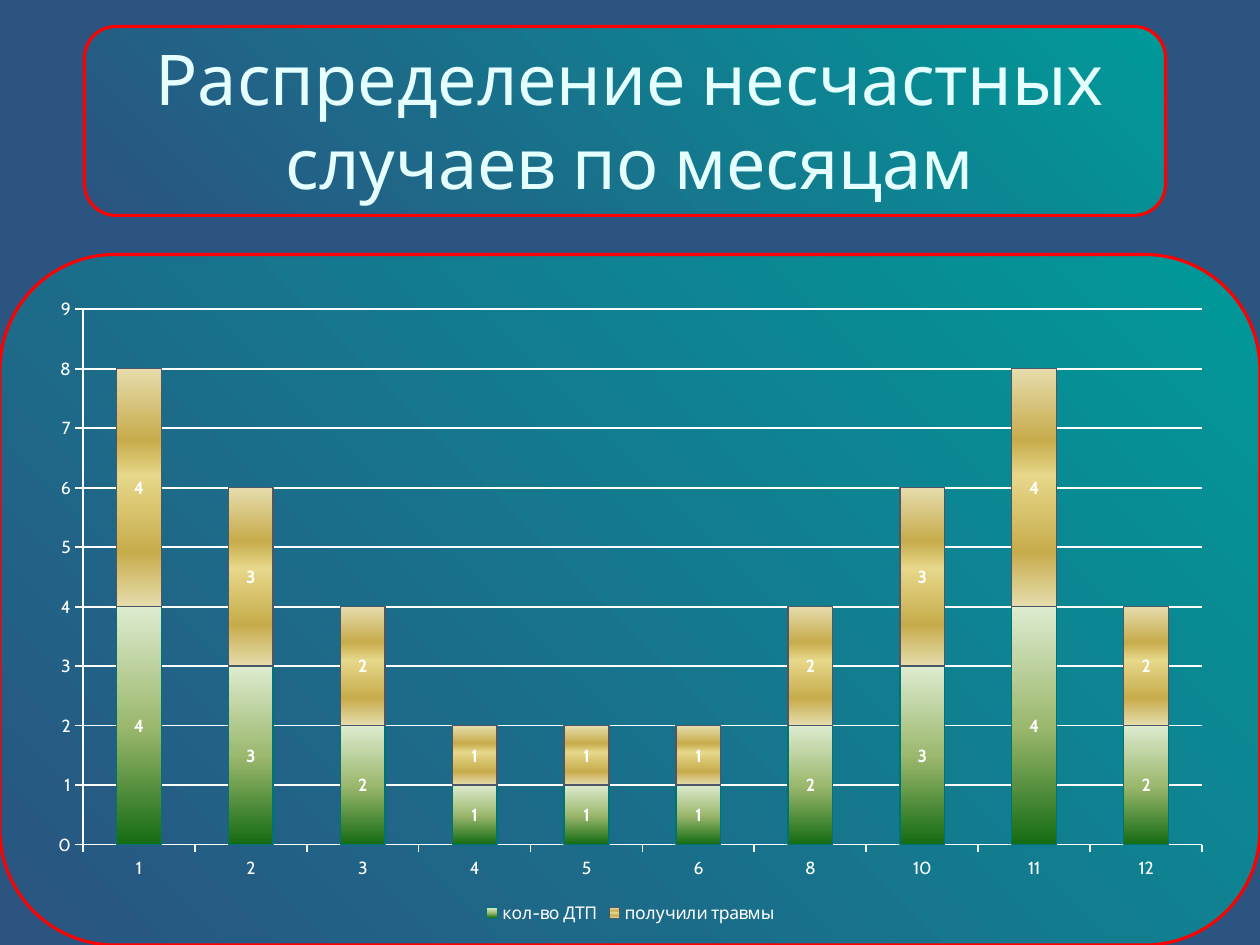
import pptx
import pptx.chart.data
import pptx.dml.color
import pptx.enum.chart
import pptx.enum.shapes
import pptx.enum.text
import pptx.oxml
import pptx.oxml.ns
import pptx.util
from pptx.util import Inches

COLORS = {
    "background": "2B5481", "teal": "009999", "outline": "FF0000",
    "title": "E5FFFF", "chart": "FFFFFF",
    "accident_line": "007373", "injury_line": "4E5768",
}
PANEL_STOPS = [(0, COLORS["background"]), (100, COLORS["teal"])]
ACCIDENT_STOPS = [(0, "DDEBCF"), (50, "9CB86E"), (100, "156B13")]
INJURY_STOPS = [(0, "E6DCAC"), (30, "C7AC4C"), (45, "E6D78A"),
                (77, "C7AC4C"), (100, "E6DCAC")]


def rgb(name):
    return pptx.dml.color.RGBColor.from_string(COLORS[name])


class SlideBuilder:
    font_name = "Cabin"

    def __init__(self, slide):
        self.slide = slide
        slide.background.fill.solid()
        slide.background.fill.fore_color.rgb = rgb("background")

    def gradient(self, fill, element, stops, angle):
        """Fill with any number of stops; the angle runs clockwise."""
        fill.gradient()
        gradient = element.find(".//" + pptx.oxml.ns.qn("a:gradFill"))
        for child in list(gradient):
            gradient.remove(child)
        namespace = pptx.oxml.ns.nsdecls("a")
        stop_xml = "".join(
            f'<a:gs pos="{position * 1000}"><a:srgbClr val="{color}"/></a:gs>'
            for position, color in stops)
        gradient.append(pptx.oxml.parse_xml(
            f"<a:gsLst {namespace}>{stop_xml}</a:gsLst>"))
        gradient.append(pptx.oxml.parse_xml(
            f'<a:lin {namespace} ang="{angle * 60000}" scaled="0"/>'))

    def line(self, line, color, width):
        line.color.rgb = rgb(color)
        line.width = pptx.util.Pt(width)

    def font(self, font, size, color, bold=False):
        font.name = self.font_name
        font.size = pptx.util.Pt(size)
        font.bold = bold
        font.color.rgb = rgb(color)

    def panel(self, left, top, width, height):
        shape = self.slide.shapes.add_shape(
            pptx.enum.shapes.MSO_SHAPE.ROUNDED_RECTANGLE,
            Inches(left), Inches(top), Inches(width), Inches(height))
        shape.shadow.inherit = False
        self.gradient(shape.fill, shape._element, PANEL_STOPS, 315)
        self.line(shape.line, "outline", 1.75)

    def title(self, text, left, top, width, height):
        shape = self.slide.shapes.title
        shape.left, shape.top = Inches(left), Inches(top)
        shape.width, shape.height = Inches(width), Inches(height)
        text_frame = shape.text_frame
        text_frame.text = text
        text_frame.word_wrap = True
        text_frame.vertical_anchor = pptx.enum.text.MSO_ANCHOR.MIDDLE
        paragraph = text_frame.paragraphs[0]
        paragraph.alignment = pptx.enum.text.PP_ALIGN.CENTER
        self.font(paragraph.runs[0].font, 40, "title")
        # Bring the title in front of the panels
        self.slide.shapes._spTree.append(shape._element)

    def stacked_chart(self, categories, series_styles, left, top, width, height):
        data = pptx.chart.data.CategoryChartData()
        data.categories = categories
        for name, values, *_ in series_styles:
            data.add_series(name, values)
        chart = self.slide.shapes.add_chart(
            pptx.enum.chart.XL_CHART_TYPE.COLUMN_STACKED,
            Inches(left), Inches(top), Inches(width), Inches(height), data).chart
        chart.has_title = False
        self.font(chart.font, 10, "chart")
        chart.has_legend = True
        chart.legend.position = pptx.enum.chart.XL_LEGEND_POSITION.BOTTOM
        chart.legend.include_in_layout = False

        # Columns and their labels
        plot = chart.plots[0]
        plot.gap_width, plot.overlap = 150, 100
        plot.vary_by_categories = False
        for series, (_, _, stops, line_color) in zip(plot.series, series_styles):
            self.gradient(series.format.fill, series._element, stops, 90)
            self.line(series.format.line, line_color, 0.75)
            series.data_labels.show_value = True
            self.font(series.data_labels.font, 10, "chart", bold=True)

        # Axes
        for axis in (chart.category_axis, chart.value_axis):
            axis.major_tick_mark = pptx.enum.chart.XL_TICK_MARK.OUTSIDE
            axis.minor_tick_mark = pptx.enum.chart.XL_TICK_MARK.NONE
            self.line(axis.format.line, "chart", 1)
        value_axis = chart.value_axis
        value_axis.minimum_scale, value_axis.maximum_scale = 0, 9
        value_axis.major_unit = 1
        value_axis.has_major_gridlines = True
        self.line(value_axis.major_gridlines.format.line, "chart", 1)
        self.plot_layout(chart, x=0.04, y=0.04, w=0.94, h=0.83)

    def plot_layout(self, chart, **fractions):
        qn = pptx.oxml.ns.qn
        plot_area = chart._chartSpace.find(".//" + qn("c:plotArea"))
        for layout in plot_area.findall(qn("c:layout")):
            plot_area.remove(layout)
        sizes = "".join(f'<c:{key} val="{value}"/>'
                        for key, value in fractions.items())
        plot_area.insert(0, pptx.oxml.parse_xml(
            f'<c:layout {pptx.oxml.ns.nsdecls("c")}><c:manualLayout>'
            '<c:layoutTarget val="inner"/><c:xMode val="edge"/>'
            f'<c:yMode val="edge"/>{sizes}</c:manualLayout></c:layout>'))


def main():
    presentation = pptx.Presentation()
    presentation.slide_width = Inches(10)
    presentation.slide_height = Inches(7.5)
    builder = SlideBuilder(
        presentation.slides.add_slide(presentation.slide_layouts[5]))

    # Panels behind the chart and the title
    builder.panel(0, 2.02, 10, 5.48)
    builder.panel(0.67, 0.21, 8.58, 1.5)
    builder.title("Распределение несчастных случаев по месяцам",
                  0.5, 0.42, 9, 1.05)

    # Accidents and injuries by month
    months = ["1", "2", "3", "4", "5", "6", "8", "10", "11", "12"]
    counts = [4, 3, 2, 1, 1, 1, 2, 3, 4, 2]
    builder.stacked_chart(
        months,
        [("кол-во ДТП", counts, ACCIDENT_STOPS, "accident_line"),
         ("получили травмы", counts, INJURY_STOPS, "injury_line")],
        0.28, 2.25, 9.45, 5.12)

    presentation.save("out.pptx")


if __name__ == "__main__":
    main()
